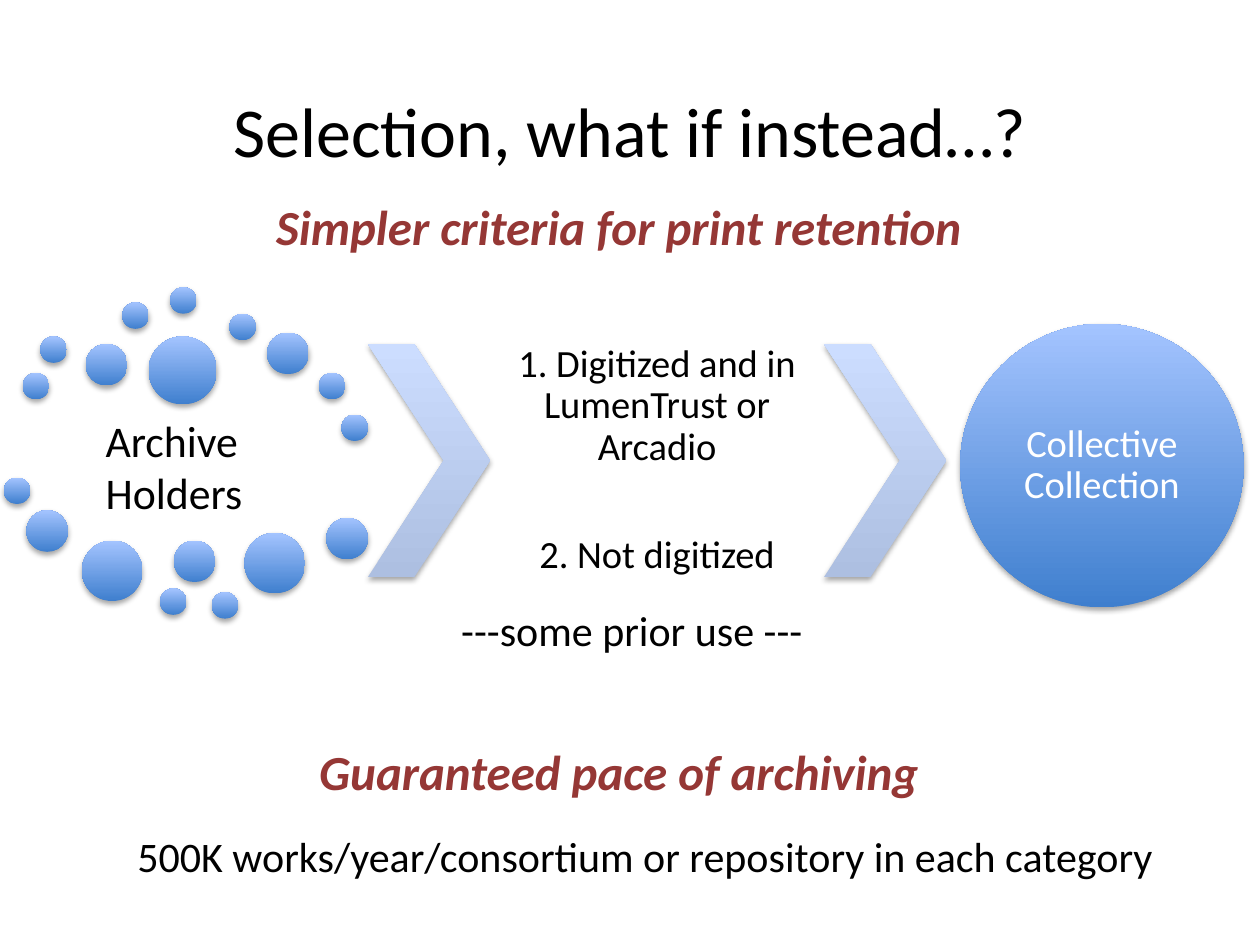
from lxml import etree
from pptx import Presentation
from pptx.dml.color import RGBColor
from pptx.enum.shapes import MSO_SHAPE
from pptx.enum.text import MSO_ANCHOR, PP_ALIGN
from pptx.oxml.ns import qn
from pptx.util import Inches, Pt

COLORS = {"text": "000000", "accent": "953735", "light": "FFFFFF",
          "ball_low": "3F7FCE", "ball_high": "A4C4FF",
          "arrow_low": "ADBFE1", "arrow_high": "CCDDFF", "shadow": "000000"}
BALL = ("ball_low", "ball_high")
ARROW = ("arrow_low", "arrow_high")

# Small circles around the archive holders: diameter -> (left, top)
DOTS = {
    0.21: [(0.18, 2.96), (0.32, 2.67), (0.97, 2.4), (1.35, 2.28), (1.82, 2.49), (2.53, 2.96),
           (2.71, 3.29), (0.03, 3.79), (1.27, 4.67), (1.68, 4.7)],
    0.33: [(0.68, 2.73), (2.12, 2.64), (0.21, 4.05), (1.38, 4.29), (2.59, 4.11)],
    0.48: [(0.65, 4.29), (1.94, 4.23)],
    0.54: [(1.18, 2.67)],
}
CHEVRON_LEFTS = [2.92, 6.54]
CHEVRON_TOP, CHEVRON_W, CHEVRON_H = 2.73, 0.97, 1.85
CRITERIA = ["1. Digitized and in LumenTrust or Arcadio", "2. Not digitized"]

# Centred lines: text, box, size, colour, emphasis
LINES = [
    ("Selection, what if instead…?", (0.5, 0.3, 9, 1.45), 40, "text", False),
    ("---some prior use ---", (0.5, 4.75, 9.03, 0.5), 24, "text", False),
    ("Simpler criteria for print retention", (0.32, 1.51, 9.18, 0.57), 28, "accent", True),
    ("500K works/year/consortium or repository in each category",
     (0.74, 6.54, 8.76, 0.5), 24, "text", False),
    ("Guaranteed pace of archiving", (0.32, 5.83, 9.18, 0.57), 28, "accent", True),
]

prs = Presentation()
prs.slide_width, prs.slide_height = Inches(10), Inches(7.5)
slide = prs.slides.add_slide(prs.slide_layouts[6])


def write(sp, paragraphs, size, color="text", emphasis=False, align=PP_ALIGN.CENTER,
          margin=None, spacing=None, gap=0, wrap=True):
    tf = sp.text_frame
    tf.word_wrap = wrap
    tf.vertical_anchor = MSO_ANCHOR.MIDDLE
    if margin is not None:
        tf.margin_left = tf.margin_right = tf.margin_top = tf.margin_bottom = Inches(margin)
    tf.text = "\n".join(paragraphs)
    for i, p in enumerate(tf.paragraphs):
        p.alignment = align
        p.line_spacing = spacing
        if i and gap:
            p.space_before = Pt(gap)
        for r in p.runs:
            r.font.name, r.font.size = "Calibri", Pt(size)
            r.font.color.rgb = RGBColor.from_string(COLORS[color])
            r.font.bold = r.font.italic = emphasis


def add_text(box, paragraphs, size, **style):
    sp = slide.shapes.add_textbox(*map(Inches, box))
    write(sp, paragraphs, size, **style)


def add_glossy(kind, box, gradient):
    """Add a shape with a vertical gradient and a soft shadow below it."""
    sp = slide.shapes.add_shape(kind, *map(Inches, box))
    sp.line.fill.background()
    sp.fill.gradient()
    sp.fill.gradient_angle = 90
    for stop, position, name in zip(sp.fill.gradient_stops, (0, 1), gradient):
        stop.position = position
        stop.color.rgb = RGBColor.from_string(COLORS[name])
    sp.shadow.inherit = False
    effects = sp.element.spPr.find(qn("a:effectLst"))
    shadow = etree.SubElement(effects, qn("a:outerShdw"), blurRad=str(Pt(3.1)),
                              dist=str(Pt(1.8)), dir="5400000", rotWithShape="0")
    color = etree.SubElement(shadow, qn("a:srgbClr"), val=COLORS["shadow"])
    etree.SubElement(color, qn("a:alpha"), val="35000")
    return sp


# Archive holders
for diameter, places in DOTS.items():
    for left, top in places:
        add_glossy(MSO_SHAPE.OVAL, (left, top, diameter, diameter), BALL)
add_text((0.74, 3.23, 1.35, 0.94), ["Archive", "Holders"], 25, align=PP_ALIGN.LEFT, wrap=False)

# Chevrons with the criteria between them
for left in CHEVRON_LEFTS:
    chevron = add_glossy(MSO_SHAPE.CHEVRON, (left, CHEVRON_TOP, CHEVRON_W, CHEVRON_H), ARROW)
    chevron.adjustments[0] = 0.62
criteria_left = CHEVRON_LEFTS[0] + CHEVRON_W
add_text((criteria_left, CHEVRON_TOP, CHEVRON_LEFTS[1] - criteria_left, CHEVRON_H),
         CRITERIA, 22, margin=0.03, spacing=0.9, gap=38)

# Collective collection
collection = add_glossy(MSO_SHAPE.OVAL, (7.62, 2.57, 2.25, 2.25), BALL)
write(collection, ["Collective Collection"], 22, color="light", margin=0, spacing=0.9)

# Title, headings and notes
for text, box, size, color, emphasis in LINES:
    add_text(box, [text], size, color=color, emphasis=emphasis)

prs.save("out.pptx")
